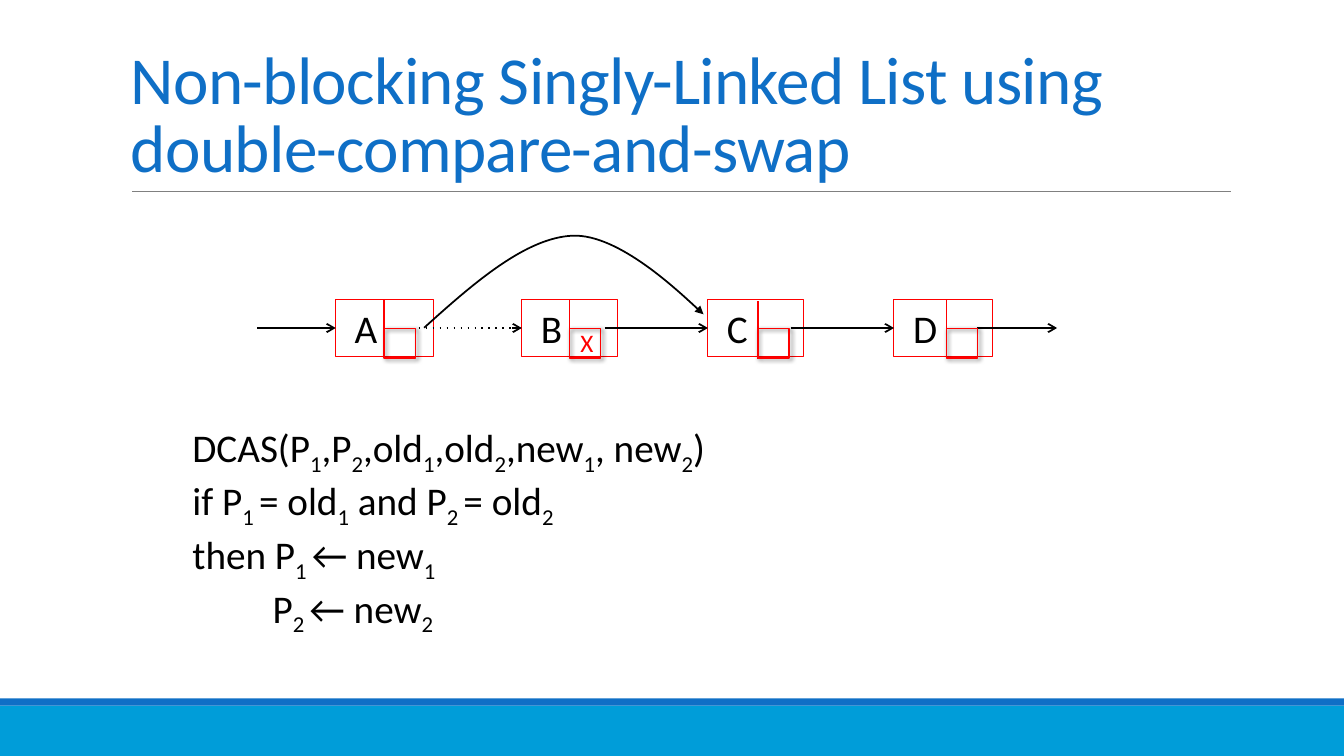
from lxml.etree import SubElement
from pptx import Presentation
from pptx.dml.color import RGBColor
from pptx.enum.shapes import MSO_CONNECTOR, MSO_SHAPE
from pptx.enum.text import MSO_ANCHOR, PP_ALIGN
from pptx.oxml.ns import qn
from pptx.util import Cm, Pt

COLORS = {
    "title": "0F6FC6", "band": "009DD9", "rule": "808080",
    "pointer": "FF0000", "ink": "000000",
}
FONT = "Calibri"
LEFT_SIDE = 1


class ListSlide:
    def __init__(self, presentation):
        self.slide = presentation.slides.add_slide(presentation.slide_layouts[6])

    def color(self, name):
        return RGBColor.from_string(COLORS[name])

    def style_line(self, shape, color, width, head=None, dash=None):
        shape.line.color.rgb = self.color(color)
        shape.line.width = Pt(width)
        outline = shape._element.spPr.find(qn("a:ln"))
        if dash:
            SubElement(outline, qn("a:prstDash"), val=dash)
        if head:
            SubElement(outline, qn("a:tailEnd"), type=head)

    def style_font(self, font, size, color):
        font.name = FONT
        font.size = Pt(size)
        font.color.rgb = self.color(color)

    def rectangle(self, left, top, width, height, fill=None, line=None, line_width=1):
        shape = self.slide.shapes.add_shape(
            MSO_SHAPE.RECTANGLE, Cm(left), Cm(top), Cm(width), Cm(height))
        shape.shadow.inherit = False
        if fill:
            shape.fill.solid()
            shape.fill.fore_color.rgb = self.color(fill)
        else:
            shape.fill.background()
        if line:
            self.style_line(shape, line, line_width)
        else:
            shape.line.fill.background()
        return shape

    def cast_shadow(self, shape):
        effects = shape._element.spPr.find(qn("a:effectLst"))
        shadow = SubElement(effects, qn("a:outerShdw"), blurRad=str(Pt(3)),
                            dist=str(Pt(2)), dir=str(45 * 60000), rotWithShape="0")
        color = SubElement(shadow, qn("a:srgbClr"), val=COLORS["ink"])
        SubElement(color, qn("a:alpha"), val="60000")

    def node(self, left, top, width, height, name):
        shape = self.rectangle(left, top, width, height, line="pointer", line_width=0.75)
        frame = shape.text_frame
        frame.text = name
        frame.vertical_anchor = MSO_ANCHOR.TOP
        frame.margin_left = Cm(0.48)
        frame.paragraphs[0].alignment = PP_ALIGN.LEFT
        self.style_font(frame.paragraphs[0].runs[0].font, 28, "ink")
        return shape

    def line(self, x1, y1, x2, y2, color, width, target=None, **ends):
        """Draw a straight line, joined to the left side of target if given."""
        connector = self.slide.shapes.add_connector(
            MSO_CONNECTOR.STRAIGHT, Cm(x1), Cm(y1), Cm(x2), Cm(y2))
        self.style_line(connector, color, width, **ends)
        SubElement(connector._element.spPr, qn("a:effectLst"))
        if target is not None:
            connector.end_connect(target, LEFT_SIDE)

    def curve(self, points, color, width, head):
        """Draw cubic Bézier segments: a start, then three points for each."""
        start, *rest = [(Cm(x), Cm(y)) for x, y in points]
        builder = self.slide.shapes.build_freeform(*start)
        builder.add_line_segments(rest, close=False)
        shape = builder.convert_to_shape()
        shape.shadow.inherit = False
        shape.fill.background()
        self.style_line(shape, color, width, head)
        outline = next(shape._element.iter(qn("a:path")))
        segments = outline.findall(qn("a:lnTo"))
        for first in range(0, len(segments), 3):
            bezier = SubElement(outline, qn("a:cubicBezTo"))
            for segment in segments[first:first + 3]:
                bezier.append(segment[0])
                outline.remove(segment)

    def text_box(self, left, top, width, height, wrap=True):
        box = self.slide.shapes.add_textbox(Cm(left), Cm(top), Cm(width), Cm(height))
        box.text_frame.word_wrap = wrap
        return box.text_frame

    def title(self, text):
        frame = self.text_box(3.05, 0.79, 27.94, 4.04)
        frame.text = text
        frame.vertical_anchor = MSO_ANCHOR.BOTTOM
        paragraph = frame.paragraphs[0]
        paragraph.line_spacing = 0.85
        for run in paragraph.runs:
            self.style_font(run.font, 48, "title")
            run._r.get_or_add_rPr().set("spc", "-50")

    def pseudocode(self, lines):
        """Write (indent, text) lines; every second part between bars is a subscript."""
        frame = self.text_box(4.6, 10.54, 24.84, 5.05)
        for index, (indent, text) in enumerate(lines):
            paragraph = frame.add_paragraph() if index else frame.paragraphs[0]
            if indent:
                paragraph._p.get_or_add_pPr().set("marL", str(Cm(indent)))
            for position, part in enumerate(text.split("|")):
                if not part:
                    continue
                run = paragraph.add_run()
                run.text = part
                self.style_font(run.font, 28, "ink")
                if position % 2:
                    run._r.get_or_add_rPr().set("baseline", "-25000")

    def mark(self, left, top, text):
        frame = self.text_box(left, top, 0.84, 1.02, wrap=False)
        frame.text = text
        self.style_font(frame.paragraphs[0].runs[0].font, 18, "pointer")


def main():
    presentation = Presentation()
    presentation.slide_width, presentation.slide_height = Cm(33.87), Cm(19.05)
    page = ListSlide(presentation)

    page.rectangle(0, 17.78, 33.87, 1.27, fill="band")
    page.rectangle(0, 17.6, 33.87, 0.18, fill="title")
    page.line(3.33, 4.83, 31.01, 4.83, "rule", 0.5)
    page.title("Non-blocking Singly-Linked List using\vdouble-compare-and-swap")

    first_left, pitch, top, height = 8.46, 4.69, 7.54, 1.45
    middle = top + height / 2
    # name, width, offset of the divider, drop of the divider
    cells = [("A", 2.46, 1.22, 0), ("B", 2.41, 1.2, 0),
             ("C", 2.41, 1.26, 0.05), ("D", 2.49, 1.32, 0)]
    lefts = [first_left + pitch * index for index in range(len(cells))]
    nodes = [page.node(left, top, width, height, name)
             for left, (name, width, _, _) in zip(lefts, cells)]

    starts = [6.48] + [left + 2.09 for left in lefts]
    ends = lefts + [26.64]
    dashes = [None, "dot", None, None, None]
    for start, end, target, dash in zip(starts, ends, nodes + [None], dashes):
        page.line(start, middle, end, middle, "ink", 1.25, target,
                  head="arrow", dash=dash)
    page.curve([(10.69, 8.26), (11.96, 7.11), (13.26, 5.99), (14.43, 5.94),
                (15.6, 5.89), (17.73, 7.92), (17.73, 7.92)], "ink", 1.25, "triangle")

    for left, (_, _, offset, drop) in zip(lefts, cells):
        divider = left + offset
        page.line(divider, top + drop, divider, top + drop + height, "pointer", 1)
        page.cast_shadow(page.rectangle(divider, 8.28, 0.79, 0.74, line="pointer"))
    page.mark(14.38, 8.13, "X")

    page.pseudocode([
        (0, "DCAS(P|1|,P|2|,old|1|,old|2|,new|1|, new|2|)"),
        (0, "if P|1 |= old|1| and P|2 |= old|2|"),
        (0, "then P|1 |← new|1|"),
        (2.02, "P|2 |← new|2|"),
    ])
    presentation.save("out.pptx")


if __name__ == "__main__":
    main()
